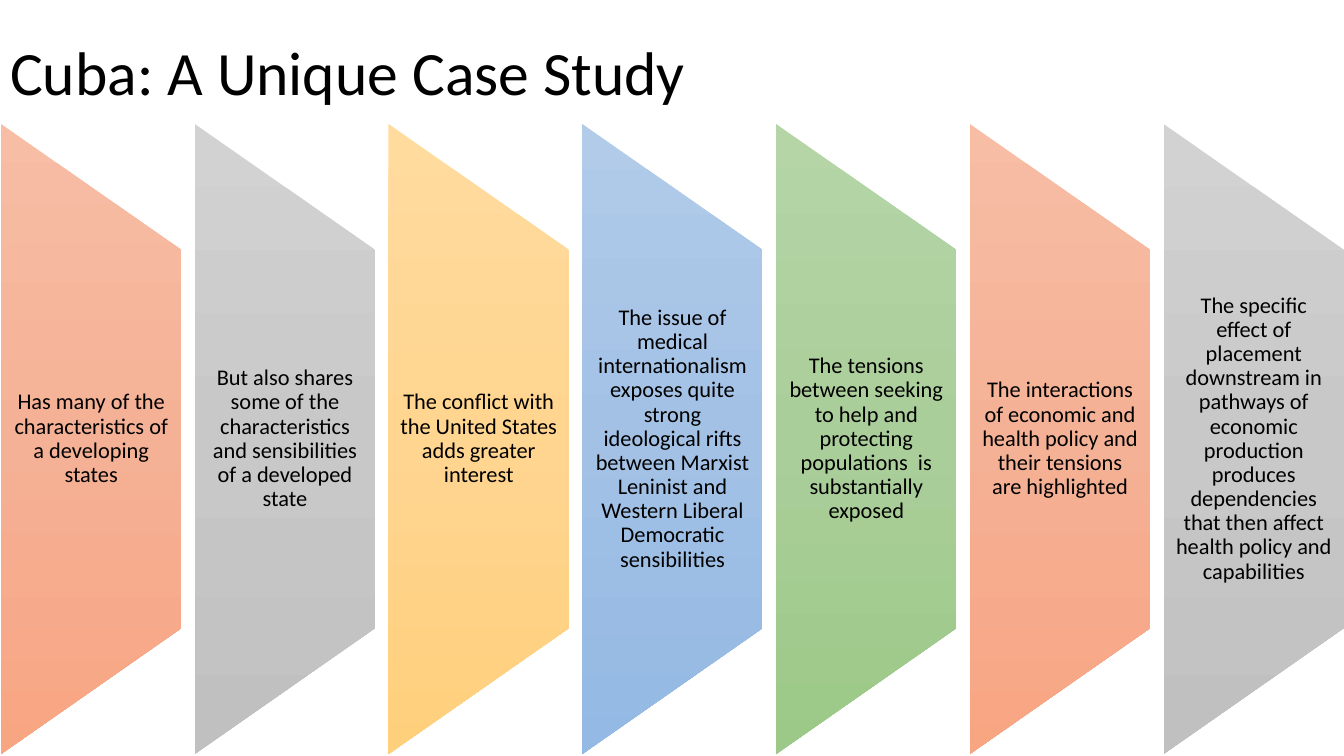
from copy import deepcopy
from pptx import Presentation, util as u
from pptx.dml.color import RGBColor
from pptx.enum import shapes, text
from pptx.oxml.ns import qn

BLACK = RGBColor(0, 0, 0)
# Gradient shades from top to bottom
ORANGE = [RGBColor.from_string(c) for c in ("F7BDA5", "F5B196", "F8A582")]
GREY = [RGBColor.from_string(c) for c in ("D2D2D2", "C8C8C8", "C0C0C0")]
GOLD = [RGBColor.from_string(c) for c in ("FFDB9E", "FFD590", "FFD07C")]
BLUE = [RGBColor.from_string(c) for c in ("B1CBE9", "A3C1E5", "93B9E4")]
GREEN = [RGBColor.from_string(c) for c in ("B5D5A7", "AACE9A", "9CC987")]

POINTS = [
    (ORANGE, "Has many of the characteristics of a developing states"),
    (GREY, "But also shares some of the characteristics and sensibilities "
           "of a developed state"),
    (GOLD, "The conflict with the United States adds greater interest"),
    (BLUE, "The issue of medical internationalism exposes quite strong "
           "ideological rifts between Marxist Leninist and Western Liberal "
           "Democratic sensibilities"),
    (GREEN, "The tensions between seeking to help and protecting "
            "populations  is substantially exposed"),
    (ORANGE, "The interactions of economic and health policy and their "
             "tensions are highlighted"),
    (GREY, "The specific effect of placement downstream in pathways of "
           "economic production produces dependencies that then affect "
           "health policy and capabilities"),
]

# Panel grid, in inches
LEFT, LAST = 0.01, 11.54
STEP = (LAST - LEFT) / (len(POINTS) - 1)
WIDE, TALL, MID = 1.79, 6.25, 4.355


def write(frame, words, size=16, align=text.PP_ALIGN.CENTER, inset=None):
    frame.word_wrap = True
    frame.auto_size = text.MSO_AUTO_SIZE.NONE
    frame.vertical_anchor = text.MSO_ANCHOR.MIDDLE
    if inset is not None:
        frame.margin_left = frame.margin_right = u.Inches(inset)
        frame.margin_top = frame.margin_bottom = 0
    para = frame.paragraphs[0]
    para.alignment = align
    para.line_spacing = 0.9
    run = para.add_run()
    run.text = words
    run.font.name = "Calibri"
    run.font.size = u.Pt(size)
    run.font.color.rgb = BLACK


class Deck:
    def __init__(self):
        self.prs = Presentation()
        self.prs.slide_width = u.Inches(13.33)
        self.prs.slide_height = u.Inches(7.5)
        self.slide = self.prs.slides.add_slide(self.prs.slide_layouts[5])

    def title(self, words):
        box = self.slide.shapes.title
        box.left, box.top = u.Inches(0), u.Inches(0.02)
        box.width, box.height = u.Inches(11.5), u.Inches(1.45)
        write(box.text_frame, words, size=44, align=text.PP_ALIGN.LEFT)

    def panel(self, left, shades):
        # Turned a quarter, so its unrotated frame is wide and low
        shape = self.slide.shapes.add_shape(
            shapes.MSO_SHAPE.FLOWCHART_MANUAL_OPERATION,
            u.Inches(left + (WIDE - TALL) / 2), u.Inches(MID - WIDE / 2),
            u.Inches(TALL), u.Inches(WIDE))
        shape.rotation = 270
        shape.shadow.inherit = False
        shape.line.fill.background()
        self.shade(shape, shades)

    def shade(self, shape, shades):
        fill = shape.fill
        fill.gradient()
        fill.gradient_angle = 270
        # Keep the gradient upright and add a third stop
        grad = shape._element.spPr.find(qn("a:gradFill"))
        grad.set("rotWithShape", "0")
        stops = grad.find(qn("a:gsLst"))
        stops.append(deepcopy(stops[-1]))
        for i, (stop, shade) in enumerate(zip(fill.gradient_stops, shades)):
            stop.position = i / 2
            stop.color.rgb = shade

    def label(self, left, words):
        high = 3.75
        box = self.slide.shapes.add_textbox(
            u.Inches(left), u.Inches(MID - high / 2),
            u.Inches(WIDE), u.Inches(high))
        write(box.text_frame, words, inset=0.11)


def main():
    deck = Deck()
    deck.title("Cuba: A Unique Case Study")
    # Row of panels with their text
    for i, (shades, words) in enumerate(POINTS):
        left = LEFT + i * STEP
        deck.panel(left, shades)
        deck.label(left, words)
    deck.prs.save("out.pptx")


if __name__ == "__main__":
    main()
